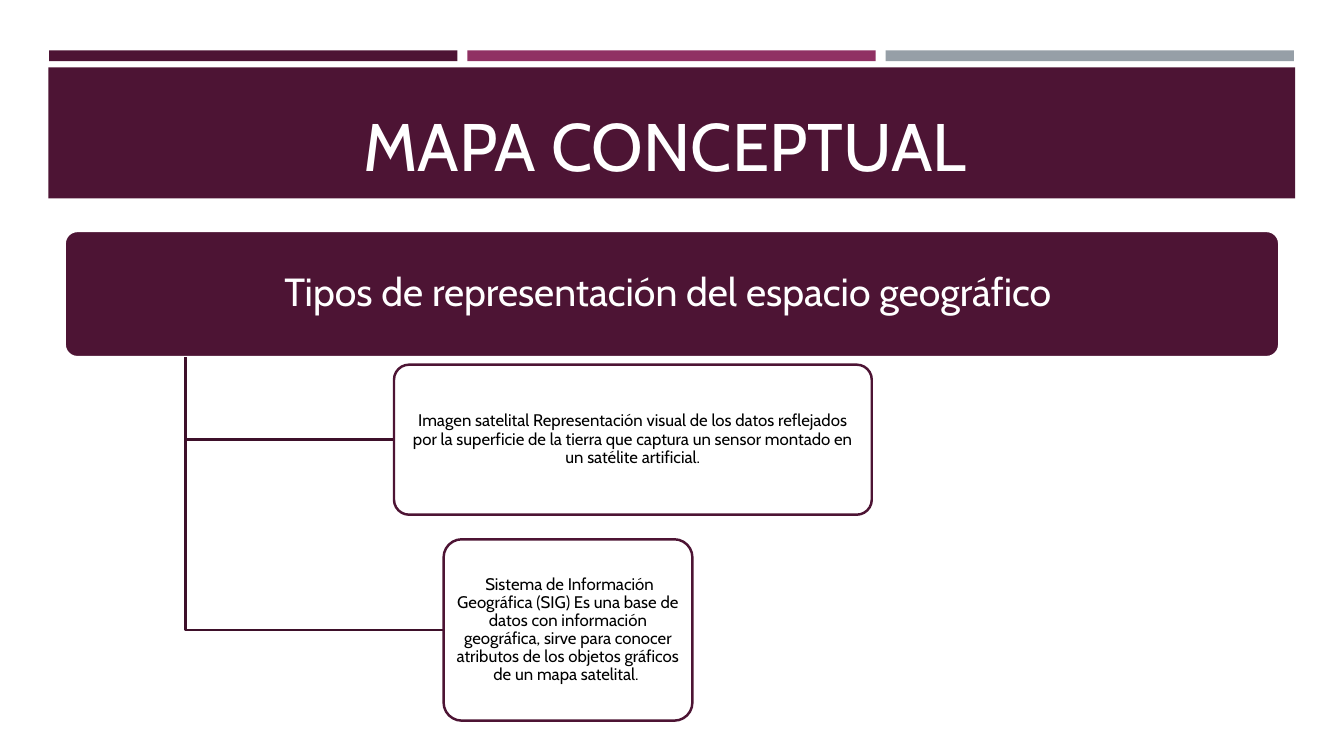
from lxml.etree import SubElement
from pptx import Presentation
from pptx.dml.color import RGBColor
from pptx.enum.shapes import MSO_SHAPE as Preset
from pptx.enum.text import MSO_ANCHOR as Anchor, PP_ALIGN as Align
from pptx.oxml.ns import qn
from pptx.util import Cm, Pt

PLUM = RGBColor(0x4D, 0x14, 0x34)
DARK_PLUM = RGBColor(0x3E, 0x10, 0x2A)
MAGENTA = RGBColor(0x90, 0x31, 0x63)
GRAY = RGBColor(0x96, 0x9F, 0xA7)
WHITE = RGBColor(0xFF, 0xFF, 0xFF)
BLACK = RGBColor(0x00, 0x00, 0x00)

prs = Presentation()
prs.slide_width, prs.slide_height = Cm(33.87), Cm(19.05)
slide = prs.slides.add_slide(prs.slide_layouts[6])
shapes = slide.shapes


def add_block(preset, left, top, width, height, fill, line=None):
    block = shapes.add_shape(preset, Cm(left), Cm(top), Cm(width), Cm(height))
    block.shadow.inherit = False
    block.fill.solid()
    block.fill.fore_color.rgb = fill
    if line is None:
        block.line.fill.background()
    else:
        block.adjustments[0] = 0.1
        block.line.color.rgb = line
        block.line.width = Pt(1.75)
    return block


def write(holder, runs, color, anchor, inset=None, spacing=None):
    frame = holder.text_frame
    frame.word_wrap = True
    frame.vertical_anchor = anchor
    if inset is not None:
        frame.margin_left = frame.margin_right = Cm(inset)
        frame.margin_top = frame.margin_bottom = Cm(inset)
    paragraph = frame.paragraphs[0]
    paragraph.alignment = Align.CENTER
    paragraph.line_spacing = spacing
    for text, size in runs:
        run = paragraph.add_run()
        run.text = text
        run.font.name = "Cabin"
        run.font.size = Pt(size)
        run.font.color.rgb = color


# Header: three bars over a title band
for column, color in enumerate((PLUM, MAGENTA, GRAY)):
    add_block(Preset.RECTANGLE, 1.24 + column * 10.54, 1.27, 10.29, 0.27, color)
add_block(Preset.RECTANGLE, 1.22, 1.7, 31.42, 3.3, PLUM)
title = shapes.add_textbox(Cm(1.63), Cm(1.96), Cm(30.63), Cm(2.82))
write(title, [("MAPA CONCEPTUAL ", 48)], WHITE, Anchor.BOTTOM)

# Root concept
root = add_block(Preset.ROUNDED_RECTANGLE, 1.63, 5.82, 30.61, 3.18, PLUM, WHITE)
write(root, [("Tipos de representación del espacio geográfico ", 28)],
      WHITE, Anchor.MIDDLE, 0.23, 0.9)

# Branches: an elbow from the root to each concept
concepts = [
    (9.93, 9.19, 12.04, 3.78, 0.2,
     [("Imagen satelital Representación visual de los datos reflejados por la "
       "superficie de la tierra que captura un sensor montado en un satélite "
       "artificial.", 12)]),
    (11.18, 13.59, 6.27, 4.57, 0.18,
     [(" ", 10.5),
      ("Sistema de Información Geográfica (SIG) Es una base de datos con "
       "información geográfica, sirve para conocer atributos de los objetos "
       "gráficos de un mapa satelital. ", 12)]),
]
trunk_x, trunk_top = Cm(4.67), Cm(9)
for left, top, width, height, inset, runs in concepts:
    middle = Cm(top + height / 2)
    path = shapes.build_freeform(trunk_x, trunk_top)
    path.add_line_segments([(trunk_x, middle), (Cm(left), middle)], close=False)
    elbow = path.convert_to_shape()
    elbow.shadow.inherit = False
    elbow.fill.background()
    elbow.line.color.rgb = DARK_PLUM
    elbow.line.width = Pt(1.75)

    concept = add_block(Preset.ROUNDED_RECTANGLE, left, top, width, height, WHITE, PLUM)
    fill_color = concept.fill._xPr.find(qn("a:solidFill"))[0]
    SubElement(fill_color, qn("a:alpha"), val="90000")
    write(concept, runs, BLACK, Anchor.MIDDLE, inset, 0.9)

prs.save("out.pptx")
